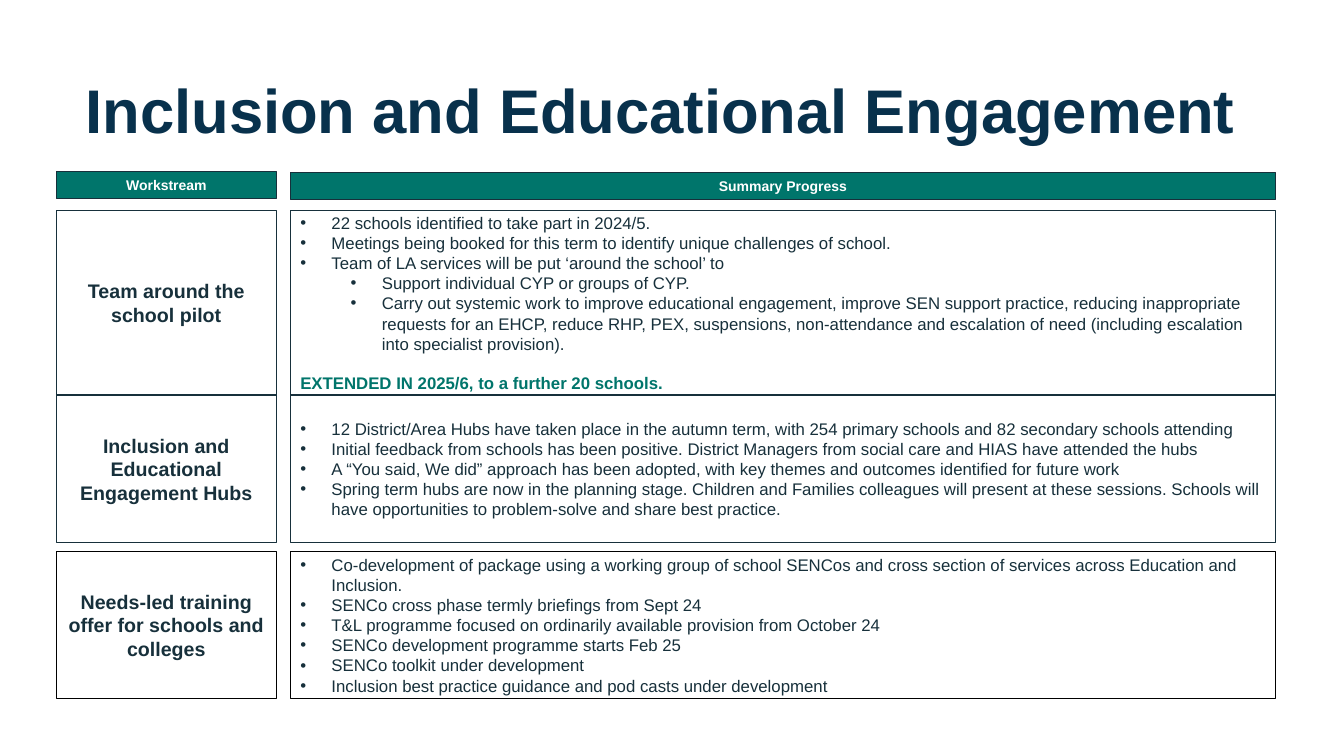
from lxml.etree import SubElement
from pptx import Presentation
from pptx.dml.color import RGBColor
from pptx.enum.shapes import MSO_SHAPE
from pptx.enum.text import MSO_ANCHOR, PP_ALIGN
from pptx.oxml.ns import qn
from pptx.util import Inches, Pt

COLOURS = {
    "title": "08314C",
    "teal": "00756B",
    "ink": "17303B",
    "black": "000000",
    "white": "FFFFFF",
}
COLUMNS = [(0.56, 2.18), (2.88, 9.77)]
HEADER_HEIGHT = 0.27
HEADERS = [("Workstream", 1.7), ("Summary Progress", 1.71)]
HANGING = 0.31
NESTING = 0.5

WORKSTREAMS = [
    ("Inclusion and Educational Engagement Hubs", 3.92, 1.46, "ink", [
        (0, "12 District/Area Hubs have taken place in the autumn term, with 254 primary schools and 82 secondary schools attending"),
        (0, "Initial feedback from schools has been positive. District Managers from social care and HIAS have attended the hubs"),
        (0, "A “You said, We did” approach has been adopted, with key themes and outcomes identified for future work"),
        (0, "Spring term hubs are now in the planning stage. Children and Families colleagues will present at these sessions. Schools will have opportunities to problem-solve and share best practice."),
    ], None),
    ("Team around the school pilot", 2.09, 1.83, "ink", [
        (0, "22 schools identified to take part in 2024/5."),
        (0, "Meetings being booked for this term to identify unique challenges of school."),
        (0, "Team of LA services will be put ‘around the school’ to"),
        (1, "Support individual CYP or groups of CYP."),
        (1, "Carry out systemic work to improve educational engagement, improve SEN support practice, reducing inappropriate requests for an EHCP, reduce RHP, PEX, suspensions, non-attendance and escalation of need (including escalation into specialist provision)."),
    ], "EXTENDED IN 2025/6, to a further 20 schools."),
    ("Needs-led training offer for schools and colleges", 5.47, 1.46, "black", [
        (0, "Co-development of package using a working group of school SENCos and cross section of services across Education and Inclusion."),
        (0, "SENCo cross phase termly briefings from Sept 24"),
        (0, "T&L programme focused on ordinarily available provision from October 24"),
        (0, "SENCo development programme starts Feb 25"),
        (0, "SENCo toolkit under development"),
        (0, "Inclusion best practice guidance and pod casts under development"),
    ], None),
]


def add_panel(column, top, height, fill, outline):
    left, width = COLUMNS[column]
    panel = slide.shapes.add_shape(
        MSO_SHAPE.RECTANGLE, Inches(left), Inches(top), Inches(width), Inches(height))
    panel.shadow.inherit = False
    panel.fill.solid()
    panel.fill.fore_color.rgb = RGBColor.from_string(COLOURS[fill])
    panel.line.color.rgb = RGBColor.from_string(COLOURS[outline])
    panel.line.width = Pt(1)
    panel.text_frame.word_wrap = True
    panel.text_frame.vertical_anchor = MSO_ANCHOR.MIDDLE
    return panel.text_frame


def write(paragraph, text, size, colour, bold=False, align=PP_ALIGN.LEFT):
    paragraph.text = text
    paragraph.alignment = align
    font = paragraph.runs[0].font
    font.name = "Arial"
    font.size = Pt(size)
    font.bold = bold
    font.color.rgb = RGBColor.from_string(COLOURS[colour])


deck = Presentation()
deck.slide_width = Inches(13.33)
deck.slide_height = Inches(7.5)
slide = deck.slides.add_slide(deck.slide_layouts[6])

heading = slide.shapes.add_textbox(
    Inches(0.75), Inches(0.4), Inches(11.67), Inches(1.45)).text_frame
heading.word_wrap = True
heading.vertical_anchor = MSO_ANCHOR.MIDDLE
write(heading.paragraphs[0], "Inclusion and Educational Engagement", 44, "title", True)
heading.paragraphs[0].line_spacing = 0.9

for column, (label, top) in enumerate(HEADERS):
    header = add_panel(column, top, HEADER_HEIGHT, "teal", "ink")
    write(header.paragraphs[0], label, 10, "white", True, PP_ALIGN.CENTER)

for workstream, top, height, outline, points, extension in WORKSTREAMS:
    name = add_panel(0, top, height, "white", outline)
    write(name.paragraphs[0], workstream, 14, "ink", True, PP_ALIGN.CENTER)

    progress = add_panel(1, top, height, "white", outline)
    for index, (level, point) in enumerate(points):
        paragraph = progress.add_paragraph() if index else progress.paragraphs[0]
        paragraph.level = level
        properties = paragraph._p.get_or_add_pPr()
        properties.set("marL", str(Inches(HANGING + NESTING * level)))
        properties.set("indent", str(-Inches(HANGING)))
        SubElement(properties, qn("a:buFont"), typeface="Arial")
        SubElement(properties, qn("a:buChar"), char="•")
        write(paragraph, point, 12, "ink")
    if extension:
        closing = progress.add_paragraph()
        write(closing, extension, 12, "teal", True)
        closing.space_before = Pt(14)

deck.save("out.pptx")
